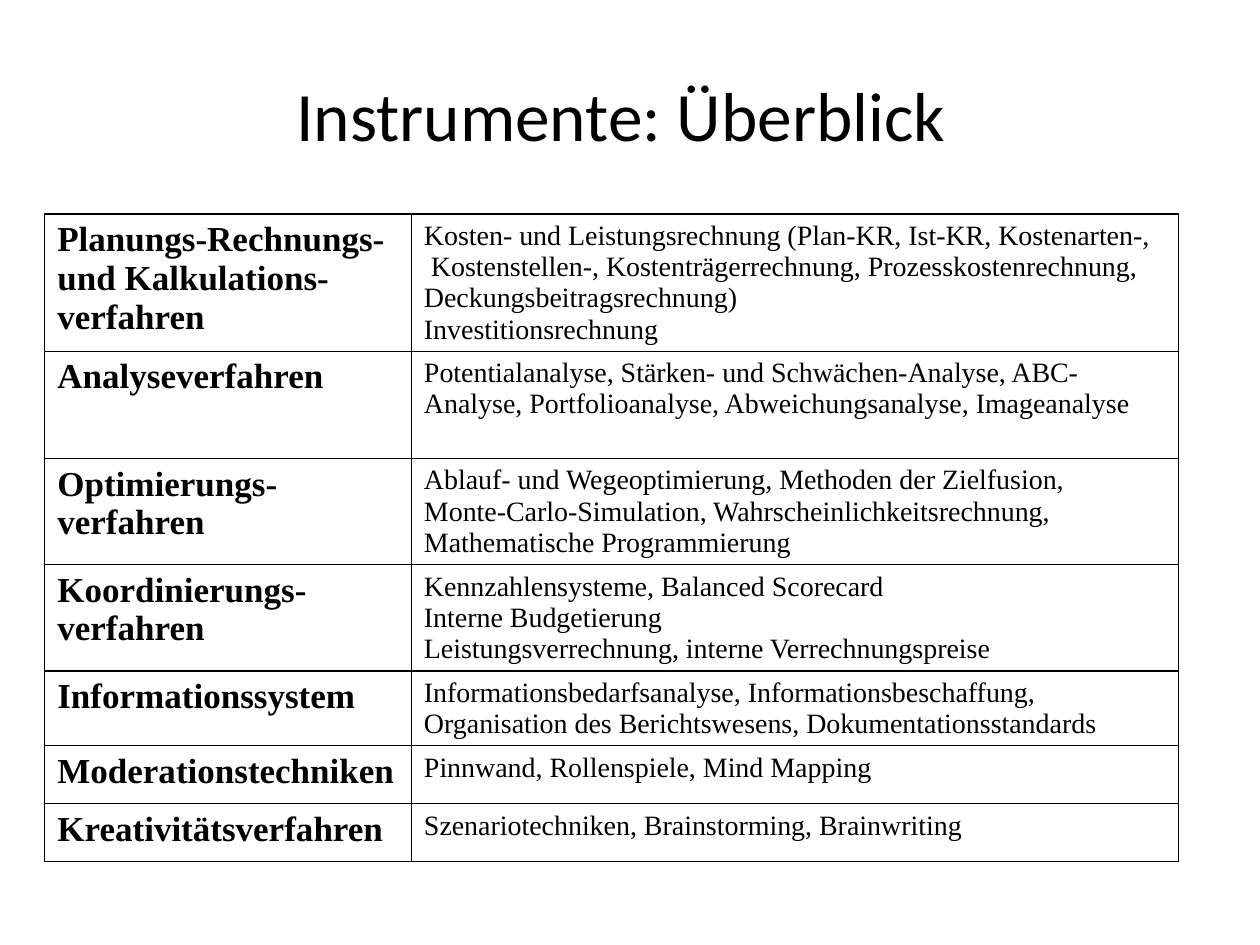
from dataclasses import dataclass

from lxml import etree
from pptx import Presentation
from pptx import util as u
from pptx.dml.color import RGBColor
from pptx.enum import text
from pptx.oxml import ns


@dataclass(frozen=True)
class TextStyle:
    font: str
    size: float
    bold: bool = False
    line_pitch: float | None = None


@dataclass(frozen=True)
class Theme:
    ink: RGBColor = RGBColor(0, 0, 0)
    paper: RGBColor = RGBColor(255, 255, 255)
    title: TextStyle = TextStyle("Calibri", 39.6)
    group: TextStyle = TextStyle("Times New Roman", 20, True, 22.1)
    method: TextStyle = TextStyle("Times New Roman", 16, False, 17.8)
    border: u.Length = u.Pt(1)
    hanging: u.Length = u.Inches(0.67)


@dataclass(frozen=True)
class Instrument:
    group: list[str]
    methods: list[str]
    height: float


THEME = Theme()
COLUMN_WIDTHS = (2.91, 6.09)

INSTRUMENTS = [
    Instrument(
        ["Planungs-Rechnungs-", "und Kalkulations-", "verfahren"],
        ["Kosten- und Leistungsrechnung (Plan-KR, Ist-KR, Kostenarten-,",
         " Kostenstellen-, Kostenträgerrechnung, Prozesskostenrechnung,",
         "Deckungsbeitragsrechnung)",
         "Investitionsrechnung"], 0.7),
    Instrument(
        ["Analyseverfahren"],
        ["Potentialanalyse, Stärken- und Schwächen-Analyse, ABC-",
         "Analyse, Portfolioanalyse, Abweichungsanalyse, Imageanalyse"], 0.85),
    Instrument(
        ["Optimierungs-", "verfahren"],
        ["Ablauf- und Wegeoptimierung, Methoden der Zielfusion,",
         "Monte-Carlo-Simulation, Wahrscheinlichkeitsrechnung,",
         "Mathematische Programmierung"], 0.72),
    Instrument(
        ["Koordinierungs-", "verfahren"],
        ["Kennzahlensysteme, Balanced Scorecard",
         "Interne Budgetierung",
         "Leistungsverrechnung, interne Verrechnungspreise"], 0.59),
    Instrument(
        ["Informationssystem"],
        ["Informationsbedarfsanalyse, Informationsbeschaffung,",
         "Organisation des Berichtswesens, Dokumentationsstandards"], 0.59),
    Instrument(["Moderationstechniken"],
               ["Pinnwand, Rollenspiele, Mind Mapping"], 0.46),
    Instrument(["Kreativitätsverfahren"],
               ["Szenariotechniken, Brainstorming, Brainwriting"], 0.46),
]


def add_run(paragraph, words: str, style: TextStyle) -> None:
    if style.line_pitch:
        paragraph.line_spacing = u.Pt(style.line_pitch)
    run = paragraph.add_run()
    run.text = words
    run.font.name = style.font
    run.font.size = u.Pt(style.size)
    run.font.bold = style.bold
    run.font.color.rgb = THEME.ink


def add_borders(cell) -> None:
    """Put a thin line on all four sides; lines must precede the fill."""
    properties = cell._tc.get_or_add_tcPr()
    for position, side in enumerate(("lnL", "lnR", "lnT", "lnB")):
        line = etree.Element(ns.qn(f"a:{side}"), w=str(THEME.border))
        fill = etree.SubElement(line, ns.qn("a:solidFill"))
        etree.SubElement(fill, ns.qn("a:srgbClr"), val=str(THEME.ink))
        properties.insert(position, line)


def fill_cell(cell, lines: list[str], style: TextStyle) -> None:
    cell.fill.solid()
    cell.fill.fore_color.rgb = THEME.paper
    add_borders(cell)
    frame = cell.text_frame
    for index, words in enumerate(lines):
        paragraph = frame.add_paragraph() if index else frame.paragraphs[0]
        indents = paragraph._p.get_or_add_pPr()
        indents.set("marL", str(THEME.hanging))
        indents.set("indent", str(-THEME.hanging))
        add_run(paragraph, words, style)


def add_title(slide, words: str) -> None:
    box = slide.shapes.add_textbox(
        u.Inches(0.43), u.Inches(0.52), u.Inches(9), u.Inches(0.76))
    frame = box.text_frame
    frame.word_wrap = True
    frame.vertical_anchor = text.MSO_ANCHOR.MIDDLE
    heading = frame.paragraphs[0]
    heading.alignment = text.PP_ALIGN.CENTER
    add_run(heading, words, THEME.title)


def add_overview(slide, instruments: list[Instrument]) -> None:
    overview = slide.shapes.add_table(
        len(instruments), len(COLUMN_WIDTHS), u.Inches(0.355), u.Inches(1.7),
        u.Inches(sum(COLUMN_WIDTHS)),
        u.Inches(sum(item.height for item in instruments))).table
    overview.first_row = overview.horz_banding = False
    for column, width in zip(overview.columns, COLUMN_WIDTHS):
        column.width = u.Inches(width)
    for row, item in zip(overview.rows, instruments):
        row.height = u.Inches(item.height)
        group, methods = row.cells
        fill_cell(group, item.group, THEME.group)
        fill_cell(methods, item.methods, THEME.method)


def main() -> None:
    deck = Presentation()
    deck.slide_width, deck.slide_height = u.Inches(10), u.Inches(7.5)
    slide = deck.slides.add_slide(deck.slide_layouts[6])

    # Heading
    add_title(slide, "Instrumente: Überblick")

    # Groups of instruments with their methods
    add_overview(slide, INSTRUMENTS)

    deck.save("out.pptx")


if __name__ == "__main__":
    main()
